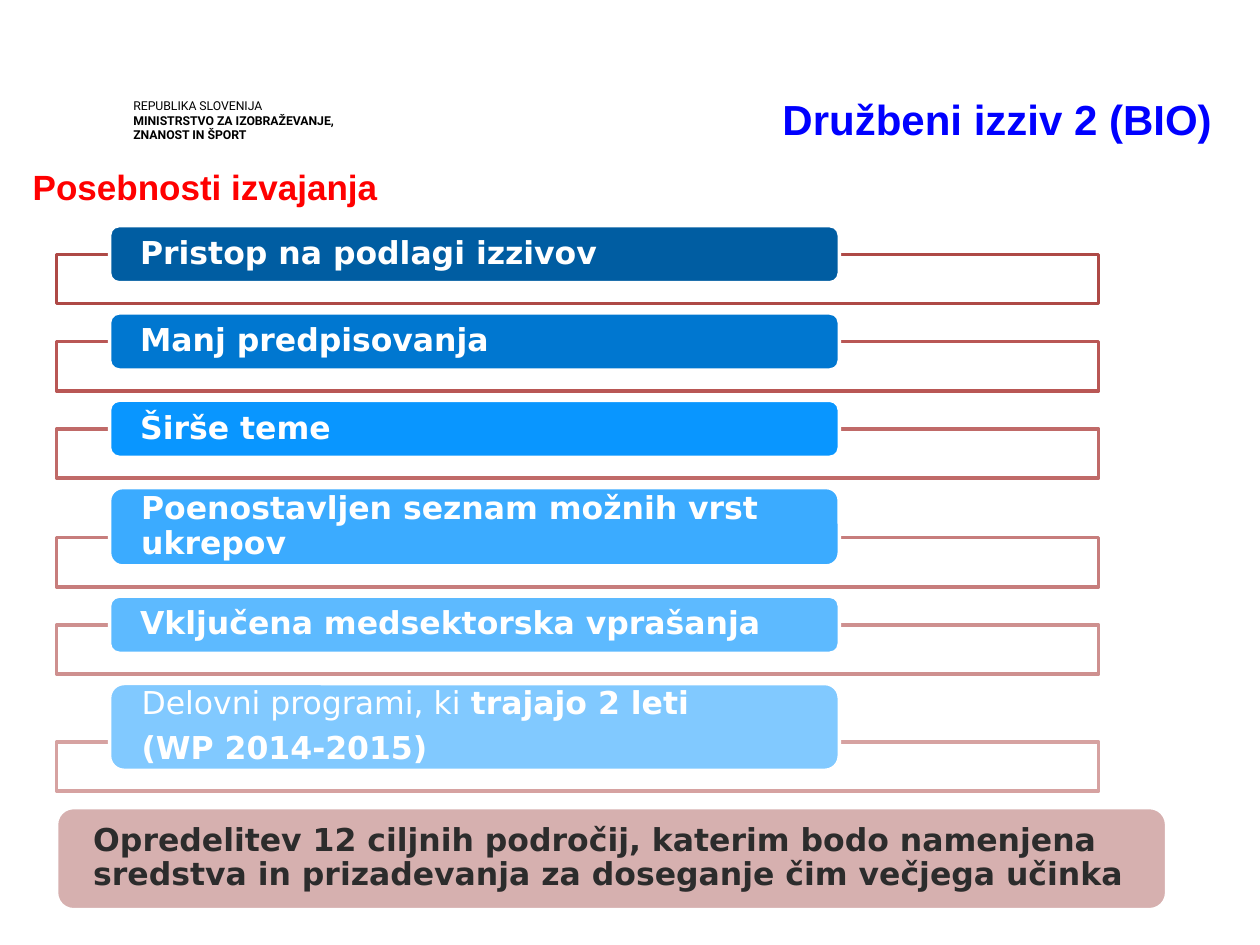
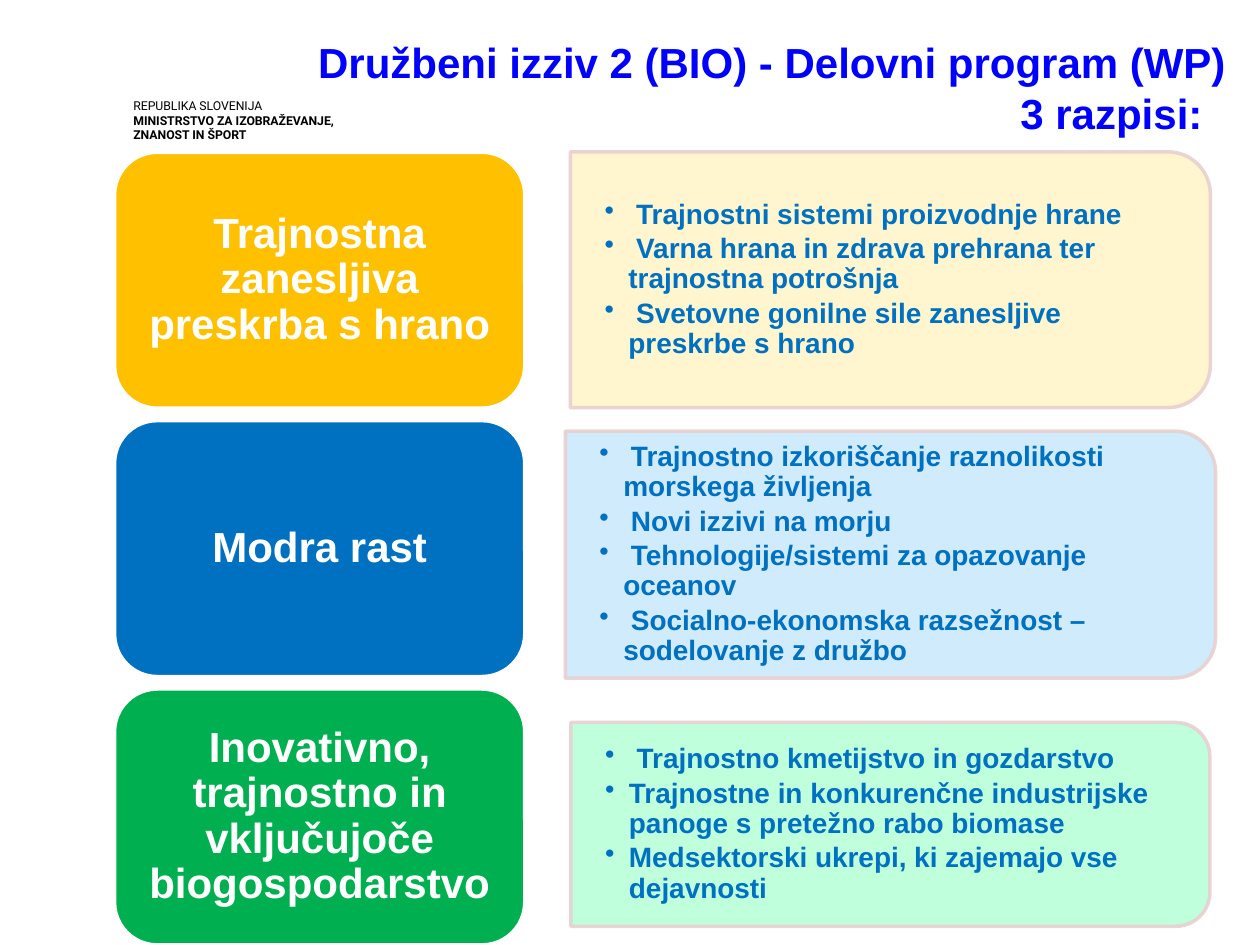
import pptx
import pptx.dml.color
import pptx.enum.shapes
import pptx.enum.text
import pptx.oxml.ns
import pptx.util
from lxml import etree

Cm, Pt = pptx.util.Cm, pptx.util.Pt
SHAPES = pptx.enum.shapes.MSO_SHAPE
ALIGN = pptx.enum.text.PP_ALIGN
ANCHOR = pptx.enum.text.MSO_ANCHOR
qn = pptx.oxml.ns.qn

COLOURS = {
    "title": "0000FF", "subtitle": "FF0000", "ministry": "000000",
    "white": "FFFFFF", "summary": "D6B0AF", "summary_text": "2C2C2C",
    "topic": "0070C0", "panel_line": "E8D0D0",
    "food_card": "FFC000", "food_panel": "FFF5C9",
    "sea_card": "0070C0", "sea_panel": "CBE9FB",
    "bio_card": "00B050", "bio_panel": "B9FFD9",
}
BAR_COLOURS = ["005DA2", "0077D0", "0996FF", "3BABFF", "5DBAFF", "81C9FF"]
FRAME_COLOURS = ["AE4946", "B95755", "C06A68", "C77D7C", "CE908F", "D6A2A1"]

MINISTRY = [("REPUBLIKA SLOVENIJA", ""), "MINISTRSTVO ZA IZOBRAŽEVANJE,", "ZNANOST IN ŠPORT"]

# bar height in cm, paragraphs
FEATURES = [
    (1.15, ["Pristop na podlagi izzivov"]),
    (1.15, ["Manj predpisovanja"]),
    (1.15, ["Širše teme"]),
    (1.58, ["Poenostavljen seznam možnih vrst ukrepov"]),
    (1.15, ["Vključena medsektorska vprašanja"]),
    (1.75, [("Delovni programi, ki ", "trajajo 2 leti"), "(WP 2014-2015)"]),
]
SUMMARY = ("Opredelitev 12 ciljnih področij, katerim bodo namenjena "
           "sredstva in prizadevanja za doseganje čim večjega učinka")

# colour key, call name, panel centre y, panel width, panel height, topics
CALLS = [
    ("food", "Trajnostna zanesljiva preskrba s hrano", 5.64, 12.9, 5.16, [
        " Trajnostni sistemi proizvodnje hrane",
        " Varna hrana in zdrava prehrana ter trajnostna potrošnja",
        " Svetovne gonilne sile zanesljive preskrbe s hrano"]),
    ("sea", "Modra rast", 11.18, 13.11, 4.98, [
        " Trajnostno izkoriščanje raznolikosti morskega življenja",
        " Novi izzivi na morju",
        " Tehnologije/sistemi za opazovanje oceanov",
        " Socialno-ekonomska razsežnost – sodelovanje z družbo"]),
    ("bio", "Inovativno, trajnostno in vključujoče biogospodarstvo", 16.62, 12.88, 4.11, [
        " Trajnostno kmetijstvo in gozdarstvo",
        "Trajnostne in konkurenčne industrijske panoge s pretežno rabo biomase",
        "Medsektorski ukrepi, ki zajemajo vse dejavnosti"]),
]


def rgb(colour):
    return pptx.dml.color.RGBColor.from_string(colour)


def set_opacity(fill_parent, percent):
    """Make the solid fill below this element partly transparent."""
    colour = fill_parent.find(qn("a:solidFill"))[0]
    etree.SubElement(colour, qn("a:alpha"), val=str(percent * 1000))


def add_bullet(paragraph):
    properties = paragraph._p.get_or_add_pPr()
    properties.set("marL", str(Cm(0.48)))
    properties.set("indent", str(-Cm(0.48)))
    etree.SubElement(properties, qn("a:buChar"), char="•")


def write(shape, paragraphs, font, size, colour, align=ALIGN.LEFT, anchor=ANCHOR.TOP,
          margins=(0.25, 0.13), line_spacing=None, space_after=0, bulleted=False):
    """Write bold paragraphs; a pair is a regular start and a bold rest."""
    frame = shape.text_frame
    frame.word_wrap = True
    frame.vertical_anchor = anchor
    frame.margin_left = frame.margin_right = Cm(margins[0])
    frame.margin_top = frame.margin_bottom = Cm(margins[1])
    for index, content in enumerate(paragraphs):
        paragraph = frame.add_paragraph() if index else frame.paragraphs[0]
        if bulleted:
            add_bullet(paragraph)
        paragraph.alignment = align
        paragraph.space_after = Pt(space_after)
        if line_spacing:
            paragraph.line_spacing = line_spacing
        regular, bold = content if isinstance(content, tuple) else ("", content)
        for text, is_bold in ((regular, False), (bold, True)):
            if text:
                run = paragraph.add_run()
                run.text = text
                run.font.name = font
                run.font.size = Pt(size)
                run.font.bold = is_bold
                run.font.color.rgb = rgb(colour)


def add_text(slide, left, top, width, height, paragraphs, *style, **options):
    box = slide.shapes.add_textbox(Cm(left), Cm(top), Cm(width), Cm(height))
    write(box, paragraphs, *style, **options)


def add_box(slide, kind, left, top, width, height, fill, line):
    shape = slide.shapes.add_shape(kind, Cm(left), Cm(top), Cm(width), Cm(height))
    shape.shadow.inherit = False
    shape.fill.solid()
    shape.fill.fore_color.rgb = rgb(fill)
    shape.line.color.rgb = rgb(line)
    shape.line.width = Pt(2)
    return shape


def add_title(slide, text, top, right):
    left = 5.74
    add_text(slide, left, top, right - left, 1.19, [text], "Arial", 24, COLOURS["title"],
             align=ALIGN.RIGHT, margins=(0.23, 0.1))


def add_slide(presentation):
    """Add a blank slide with the ministry's name."""
    slide = presentation.slides.add_slide(presentation.slide_layouts[6])
    add_text(slide, 2.69, 1.98, 6.45, 0.86, MINISTRY, "Roboto", 7, COLOURS["ministry"],
             margins=(0, 0), line_spacing=Pt(8.4))
    return slide


def add_bar(slide, left, top, width, height, paragraphs, fill, text_colour, margin):
    bar = add_box(slide, SHAPES.ROUNDED_RECTANGLE, left, top, width, height,
                  fill, COLOURS["white"])
    write(bar, paragraphs, "DejaVu Sans", 18, text_colour, anchor=ANCHOR.MIDDLE,
          margins=(margin, 0), line_spacing=0.9, space_after=6.3)


def add_features(slide):
    top, gap = 4.55, 0.61
    for (height, paragraphs), fill, line in zip(FEATURES, BAR_COLOURS, FRAME_COLOURS):
        add_box(slide, SHAPES.RECTANGLE, 1.14, top + height - 0.57, 21.01, 0.99,
                COLOURS["white"], line)
        add_bar(slide, 2.21, top, 14.71, height, paragraphs, fill, COLOURS["white"], 0.56)
        top += height + gap


def add_card(slide, top, name, fill):
    card = add_box(slide, SHAPES.ROUNDED_RECTANGLE, 2.31, top, 8.27, 5.16,
                   fill, COLOURS["white"])
    write(card, [name], "Arial", 24, COLOURS["white"], align=ALIGN.CENTER,
          anchor=ANCHOR.MIDDLE, line_spacing=0.9, space_after=8.4)


def add_panel(slide, middle, width, height, topics, fill):
    """Add a panel rounded on its right side, with bulleted topics."""
    centre = 17.95
    panel = add_box(slide, SHAPES.ROUND_2_SAME_RECTANGLE, centre - height / 2,
                    middle - width / 2, height, width, fill, COLOURS["panel_line"])
    panel.rotation = 90
    properties = panel._element.spPr
    set_opacity(properties, 90)
    set_opacity(properties.find(qn("a:ln")), 90)
    text_height = height - 0.48
    add_text(slide, centre - width / 2, middle - text_height / 2, width - 0.25, text_height,
             topics, "Arial", 16, COLOURS["topic"], anchor=ANCHOR.MIDDLE,
             margins=(0.69, 0.36), line_spacing=0.9, space_after=2.4, bulleted=True)


def build_features_slide(presentation):
    slide = add_slide(presentation)
    add_title(slide, "Družbeni izziv\u00a02 (BIO)".replace("\u00a0", " "), 1.78, 24.66)
    add_text(slide, 0.41, 3.2, 24.54, 1.1, ["Posebnosti izvajanja"],
             "Arial", 20, COLOURS["subtitle"])
    add_features(slide)
    add_bar(slide, 1.14, 16.28, 22.38, 2.06, [SUMMARY], COLOURS["summary"],
            COLOURS["summary_text"], 0.64)


def build_calls_slide(presentation):
    slide = add_slide(presentation)
    for row, (key, name, middle, width, height, topics) in enumerate(CALLS):
        add_panel(slide, middle, width, height, topics, COLOURS[key + "_panel"])
        add_card(slide, 3.07 + 5.41 * row, name, COLOURS[key + "_card"])
    add_title(slide, "Družbeni izziv 2 (BIO) - Delovni program (WP)", 0.63, 24.94)
    add_title(slide, "3 razpisi:", 1.66, 24.47)


def main():
    presentation = pptx.Presentation()
    presentation.slide_width = Cm(25.4)
    presentation.slide_height = Cm(19.05)
    build_features_slide(presentation)
    build_calls_slide(presentation)
    presentation.save("out.pptx")


if __name__ == "__main__":
    main()
